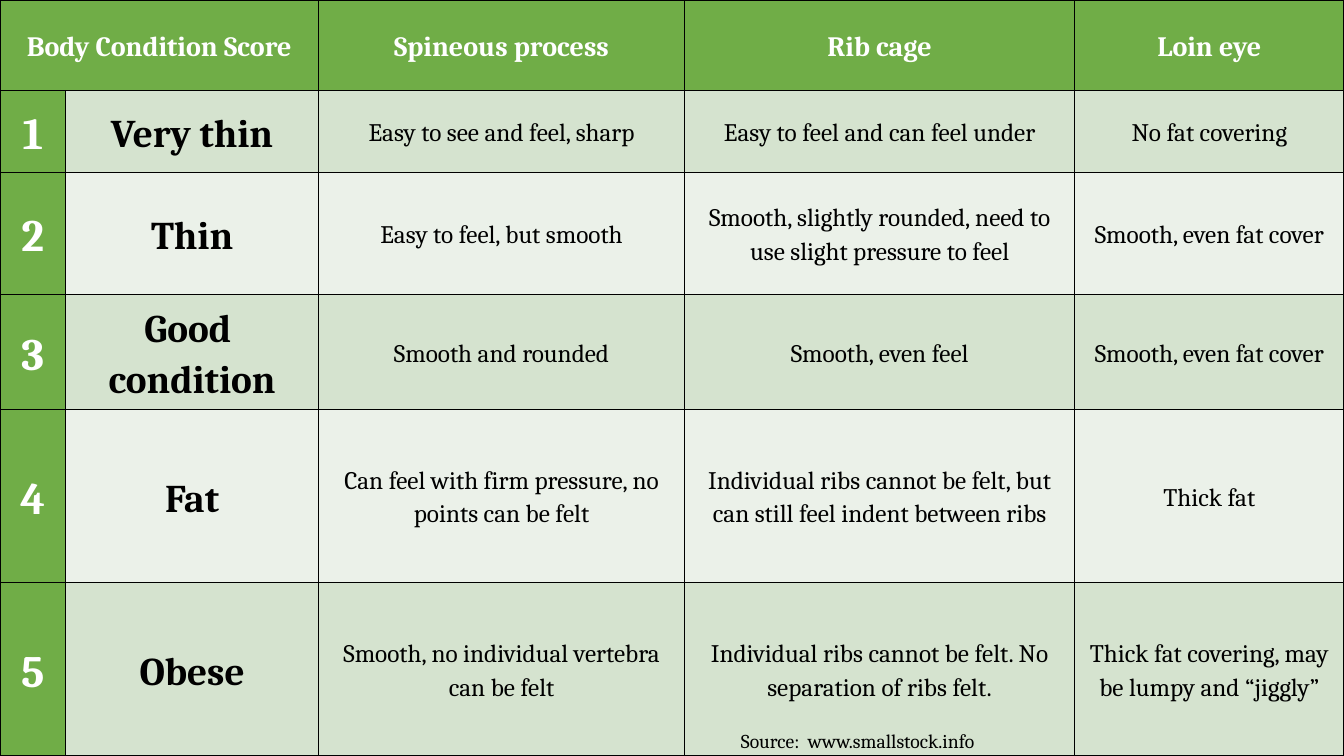
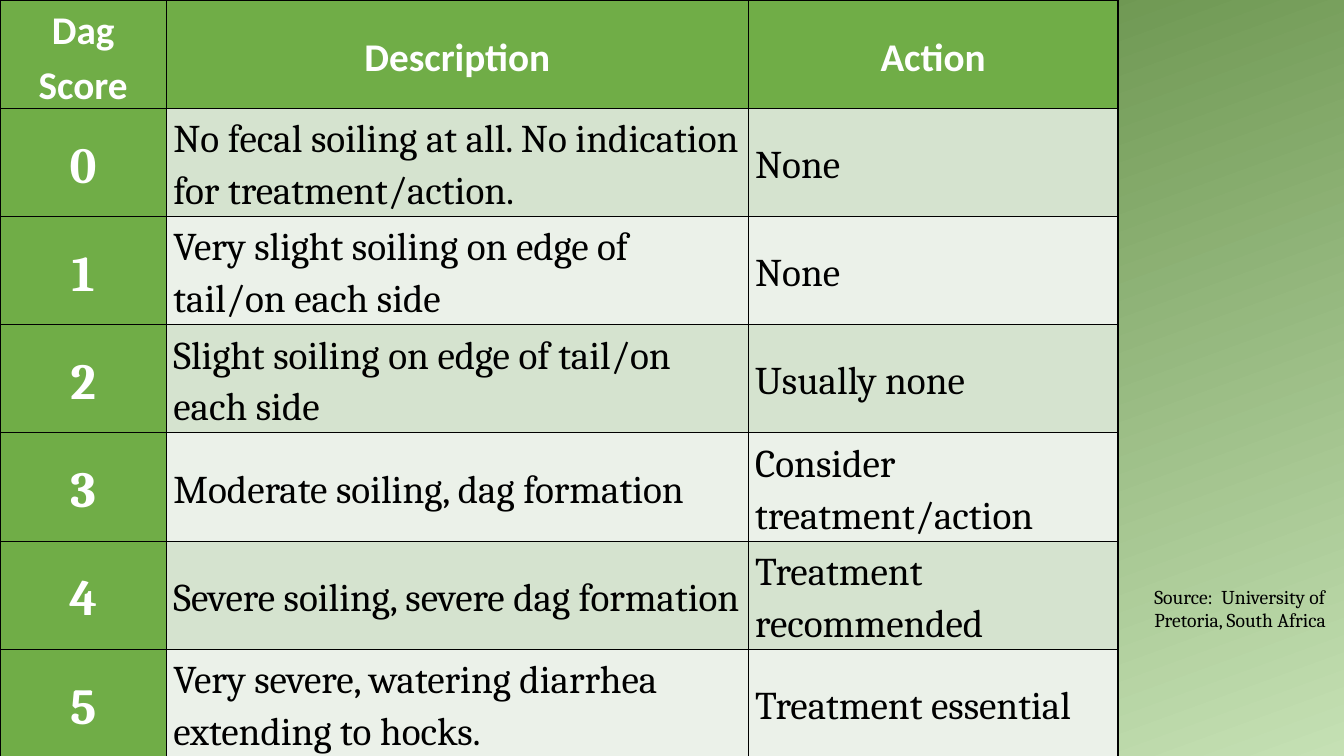
from lxml.etree import SubElement
from pptx import Presentation
from pptx.dml.color import RGBColor
from pptx.enum.text import MSO_ANCHOR, MSO_AUTO_SIZE, PP_ALIGN
from pptx.oxml import parse_xml
from pptx.oxml.ns import nsdecls, qn
from pptx.util import Inches, Pt

COLORS = {
    "accent": "70AD47",
    "band_dark": "D5E3CF",
    "band_light": "EBF1E9",
    "text": "000000",
    "inverse": "FFFFFF",
    "gradient_start": "548235",
    "gradient_end": "C5E0B4",
}

HEADING = {"name": "Cambria", "size": Pt(20), "bold": True, "color": "inverse"}
BODY = {"name": "Cambria", "size": Pt(18), "bold": False, "color": "text"}
SOURCE = BODY | {"size": Pt(14)}

CONDITION_ROWS = [
    ["Body Condition Score", "", "Spineous process", "Rib cage", "Loin eye"],
    ["1", "Very thin", "Easy to see and feel, sharp",
     "Easy to feel and can feel under", "No fat covering"],
    ["2", "Thin", "Easy to feel, but smooth",
     "Smooth, slightly rounded, need to use slight pressure to feel",
     "Smooth, even fat cover"],
    ["3", "Good \ncondition", "Smooth and rounded", "Smooth, even feel",
     "Smooth, even fat cover"],
    ["4", "Fat", "Can feel with firm pressure, no points can be felt",
     "Individual ribs cannot be felt, but can still feel indent between ribs",
     "Thick fat"],
    ["5", "Obese", "Smooth, no individual vertebra can be felt",
     "Individual ribs cannot be felt. No separation of ribs felt.",
     "Thick fat covering, may be lumpy and “jiggly”"],
]
CONDITION_STYLES = [HEADING | {"size": Pt(32)},
                    BODY | {"size": Pt(28), "bold": True},
                    BODY, BODY, BODY]

DAG_ROWS = [
    ["Dag Score", "Description", "Action"],
    ["0", "No fecal soiling at all. No indication for treatment/action.", "None"],
    ["1", "Very slight soiling on edge of tail/on each side", "None"],
    ["2", "Slight soiling on edge of tail/on each side", "Usually none"],
    ["3", "Moderate soiling, dag formation", "Consider treatment/action"],
    ["4", "Severe soiling, severe dag formation", "Treatment recommended"],
    ["5", "Very severe, watering diarrhea extending to hocks.",
     "Treatment essential"],
]
DAG_STYLES = [HEADING | {"size": Pt(36)}] + [BODY | {"size": Pt(28)}] * 2


def rgb(name):
    return RGBColor.from_string(COLORS[name])


def write(text_frame, text, style):
    paragraph = text_frame.paragraphs[0]
    paragraph.text = text
    for run in paragraph.runs:
        for key, value in style.items():
            if key == "color":
                run.font.color.rgb = rgb(value)
            else:
                setattr(run.font, key, value)
    return paragraph


def add_borders(cell):
    """Draw a 1 pt line on all four sides; lines precede the fill in tcPr."""
    properties = cell._tc.get_or_add_tcPr()
    for index, side in enumerate("LRTB"):
        properties.insert(index, parse_xml(
            f'<a:ln{side} {nsdecls("a")} w="{Pt(1)}"><a:solidFill>'
            f'<a:srgbClr val="{COLORS["text"]}"/></a:solidFill></a:ln{side}>'))


def fill_cell(cell, text, style, fill, alignment):
    layout = {"vertical_anchor": MSO_ANCHOR.MIDDLE,
              "margin_left": Inches(0.07), "margin_right": Inches(0.07),
              "margin_top": 0, "margin_bottom": 0}
    for key, value in layout.items():
        setattr(cell, key, value)
    cell.fill.solid()
    cell.fill.fore_color.rgb = rgb(fill)
    add_borders(cell)
    paragraph = write(cell.text_frame, text, style)
    paragraph.alignment = alignment
    paragraph.line_spacing = 1.15


def add_score_table(slide, rows, widths, heights, heading, styles, body_alignment):
    """Add a table with green header row and score column, and banded body."""
    table = slide.shapes.add_table(
        len(rows), len(widths), 0, 0,
        Inches(sum(widths)), Inches(sum(heights))).table
    for column, width in zip(table.columns, widths):
        column.width = Inches(width)
    for row, height in zip(table.rows, heights):
        row.height = Inches(height)
    for row_index, texts in enumerate(rows):
        band = "band_dark" if row_index % 2 else "band_light"
        for column_index, text in enumerate(texts):
            is_green = row_index == 0 or column_index == 0
            fill_cell(table.cell(row_index, column_index), text,
                      styles[column_index] if row_index else heading,
                      "accent" if is_green else band,
                      PP_ALIGN.CENTER if is_green else body_alignment)
    return table


def add_source(slide, text, left, top, width, height, wrap):
    box = slide.shapes.add_textbox(*map(Inches, (left, top, width, height)))
    box.text_frame.word_wrap = wrap
    box.text_frame.auto_size = MSO_AUTO_SIZE.SHAPE_TO_FIT_TEXT
    write(box.text_frame, text, SOURCE)


def add_gradient_slide(presentation):
    slide = presentation.slides.add_slide(presentation.slide_layouts[6])
    fill = slide.background.fill
    fill.gradient()
    fill.gradient_angle = 290
    stops = ((0.11, "gradient_start"), (1, "gradient_end"))
    for stop, (position, color) in zip(fill.gradient_stops, stops):
        stop.position = position
        stop.color.rgb = rgb(color)
    start = slide.element.find(".//" + qn("a:srgbClr"))
    SubElement(start, qn("a:alpha"), val="85000")
    return slide


def add_condition_slide(presentation):
    slide = add_gradient_slide(presentation)
    table = add_score_table(
        slide, CONDITION_ROWS, [0.65, 2.51, 3.63, 3.87, 2.67],
        [0.9, 0.81, 1.21, 1.14, 1.72, 1.72],
        HEADING, CONDITION_STYLES, PP_ALIGN.CENTER)
    table.cell(0, 0).merge(table.cell(0, 1))
    add_source(slide, "Source:  www.smallstock.info",
               7.25, 7.18, 2.57, 0.34, wrap=False)


def add_dag_slide(presentation):
    slide = add_gradient_slide(presentation)
    add_score_table(
        slide, DAG_ROWS, [1.65, 5.77, 3.67], [1.07] * len(DAG_ROWS),
        HEADING | {"name": "Calibri", "size": Pt(28)},
        DAG_STYLES, PP_ALIGN.LEFT)
    add_source(slide, "Source:  University of Pretoria, South Africa",
               11.35, 5.75, 2, 0.57, wrap=True)


def main():
    presentation = Presentation()
    presentation.slide_width = Inches(13.33)
    presentation.slide_height = Inches(7.5)
    add_condition_slide(presentation)
    add_dag_slide(presentation)
    presentation.save("out.pptx")


if __name__ == "__main__":
    main()
